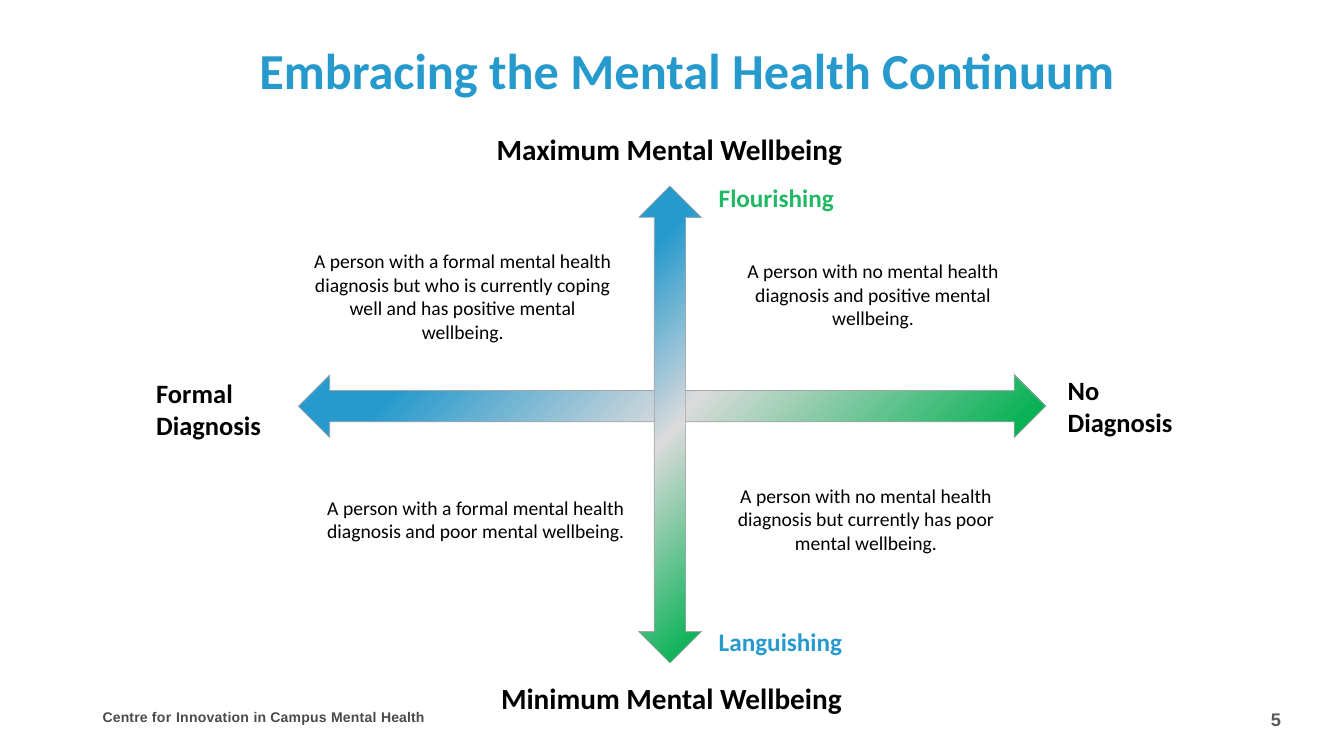
from lxml import etree
from pptx import Presentation
from pptx.dml.color import RGBColor
from pptx.enum.shapes import MSO_SHAPE
from pptx.enum.text import MSO_ANCHOR, PP_ALIGN
from pptx.oxml.ns import qn
from pptx.util import Inches, Pt

LEFT, MID = PP_ALIGN.LEFT, PP_ALIGN.CENTER
TOP, CENTRE = MSO_ANCHOR.TOP, MSO_ANCHOR.MIDDLE
ARROW = MSO_SHAPE.LEFT_RIGHT_ARROW

BLUE, GREEN, BLACK = "279ACD", "21B865", "000000"
FADE = [(3, "00B050"), (48, "DBDBDC"), (86, BLUE)]

# style: font, size, bold, alignment, anchor
STYLES = {
    "title": ("Calibri", 36, True, MID, TOP),
    "pole": ("Calibri", 20.9, True, MID, CENTRE),
    "side": ("Calibri", 18.9, True, LEFT, CENTRE),
    "state": ("Calibri", 18, True, LEFT, TOP),
    "body": ("Calibri", 14, False, MID, CENTRE),
    "page": ("Arial", 13, True, MID, TOP),
    "foot": ("Arial", 10, True, LEFT, TOP),
}

# A paragraph is a list of (words, letter spacing in points)
FOOTER = [("Centre ", 0.1), ("for ", 0.3), ("Innovation ", 0.2), ("in ", 0.1),
          ("Campus Mental ", 0.2), ("Health", 0.1)]

# style, colour, (left, top, width, height), paragraphs
TEXTS = [
    ("page", "595959", (12.34, 6.98, 0.63, 0.32), ["5"]),
    ("foot", "4A4A4C", (0.92, 6.98, 5.75, 0.27), [FOOTER]),
    ("title", BLUE, (1.4, 0.34, 10.83, 1.45),
     ["Embracing the Mental Health Continuum"]),
    ("pole", BLACK, (4.72, 1.17, 3.84, 0.62), ["Maximum Mental Wellbeing"]),
    ("pole", BLACK, (4.74, 6.61, 3.84, 0.62), ["Minimum Mental Wellbeing"]),
    ("side", BLACK, (1.45, 3.75, 2.38, 0.62), ["Formal", "Diagnosis"]),
    ("side", BLACK, (10.49, 3.72, 1.68, 0.62), ["No", "Diagnosis"]),
    ("body", BLACK, (2.96, 2.06, 3.26, 1.76),
     ["A person with a formal mental health diagnosis but who is currently "
      "coping well and has positive mental wellbeing."]),
    ("body", BLACK, (7.03, 2.04, 3.26, 1.76),
     ["A person with no mental health diagnosis and positive mental "
      "wellbeing."]),
    ("body", BLACK, (3.09, 4.27, 3.26, 1.76),
     ["A person with a formal mental health diagnosis and poor mental "
      "wellbeing."]),
    ("body", BLACK, (6.96, 4.27, 3.26, 1.76),
     ["A person with no mental health diagnosis but currently has poor "
      "mental wellbeing."]),
    ("state", GREEN, (7.03, 1.76, 2.05, 0.4), ["Flourishing"]),
    ("state", BLUE, (7.03, 6.16, 2.05, 0.4), ["Languishing"]),
]

# (left, top, width, height), rotation
AXES = [((2.96, 3.72, 7.41, 0.62), 0), ((4.28, 3.9, 4.73, 0.62), 270)]


def colour(code):
    return RGBColor.from_string(code)


def place(box):
    return [Inches(n) for n in box]


def fade(shape):
    """Fill with a radial gradient centred on the bottom right corner."""
    grad = etree.Element(qn("a:gradFill"), rotWithShape="0")
    stops = etree.SubElement(grad, qn("a:gsLst"))
    for pos, code in FADE:
        stop = etree.SubElement(stops, qn("a:gs"), pos=str(pos * 1000))
        etree.SubElement(stop, qn("a:srgbClr"), val=code)
    ring = etree.SubElement(grad, qn("a:path"), path="circle")
    etree.SubElement(ring, qn("a:fillToRect"), l="100000", t="100000")
    shape._element.spPr.find(qn("a:prstGeom")).addnext(grad)


def add_axis(slide, box, turn):
    axis = slide.shapes.add_shape(ARROW, *place(box))
    axis.rotation = turn
    axis.shadow.inherit = False
    axis.line.color.rgb = colour("A5A5A5")
    axis.line.width = Pt(0.5)
    fade(axis)


def add_text(slide, style, code, box, paras):
    face, size, bold, align, anchor = STYLES[style]
    look = {"name": face, "size": Pt(size), "bold": bold}
    frame = slide.shapes.add_textbox(*place(box)).text_frame
    frame.word_wrap = True
    frame.vertical_anchor = anchor
    for i, runs in enumerate(paras):
        para = frame.add_paragraph() if i else frame.paragraphs[0]
        para.alignment = align
        for words, gap in [(runs, 0)] if isinstance(runs, str) else runs:
            run = para.add_run()
            run.text = words
            for key, value in look.items():
                setattr(run.font, key, value)
            run.font.color.rgb = colour(code)
            if gap:
                run._r.get_or_add_rPr().set("spc", str(round(gap * 100)))


def main():
    deck = Presentation()
    deck.slide_width, deck.slide_height = Inches(13.33), Inches(7.5)
    slide = deck.slides.add_slide(deck.slide_layouts[6])
    for box, turn in AXES:
        add_axis(slide, box, turn)
    for item in TEXTS:
        add_text(slide, *item)
    deck.save("out.pptx")


if __name__ == "__main__":
    main()
